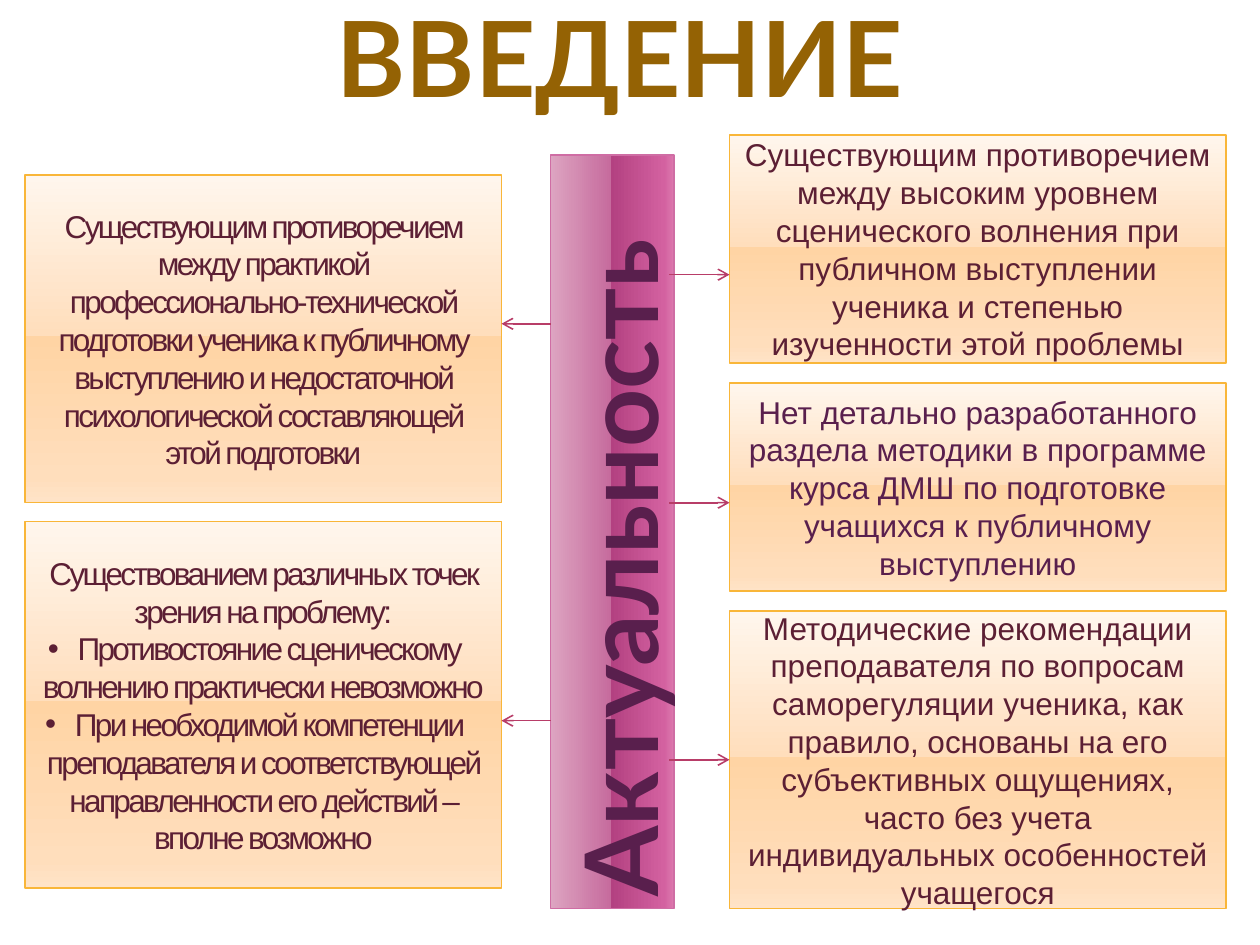
from dataclasses import dataclass

from lxml.etree import SubElement
from pptx import Presentation
from pptx.dml.color import RGBColor
from pptx.enum.shapes import MSO_CONNECTOR as Connector, MSO_SHAPE as Shape
from pptx.enum.text import MSO_ANCHOR as Anchor, PP_ALIGN as Align
from pptx.oxml.ns import qn
from pptx.util import Inches, Pt


@dataclass(frozen=True)
class Theme:
    title: str = "946204"
    title_edge: str = "5E1A50"
    plum: str = "591F4D"
    wine: str = "5C1F34"
    card_edge: str = "F9B639"
    bar_edge: str = "CF6DA4"
    arrow: str = "B83D68"
    card_stops: tuple = ("FFF6ED", "FFDEBC", "FFD4A4", "FFDEBC", "FFE3C7")
    bar_stops: tuple = ("DDA4C1", "C66B9D", "B34181", "D361A0", "DC79AE")
    stop_places: tuple = (0, 49, 49, 92, 100)
    heading_font: str = "Lato"
    body_font: str = "Arial"
    title_size: int = 60
    bar_size: int = 58
    body_size: int = 18
    line_width: float = 0.9


THEME = Theme()
LEFT_COLUMN, RIGHT_COLUMN = (0.2, 3.78), (5.79, 3.94)
BAR_LEFT, BAR_RIGHT = 4.37, 5.31

# top, height, arrow height, paragraphs (a leading bullet marks a list item)
LEFT_CARDS = [
    (1.39, 2.6, 2.57, [
        "Существующим противоречием между практикой профессионально-технической "
        "подготовки ученика к публичному выступлению и недостаточной "
        "психологической составляющей этой подготовки"]),
    (4.14, 2.91, 5.72, [
        "Существованием различных точек зрения на проблему:",
        "•Противостояние сценическому волнению практически невозможно",
        "•При необходимой компетенции преподавателя и соответствующей "
        "направленности его действий – вполне возможно"]),
]
# top, height, arrow height, text colour, paragraphs
RIGHT_CARDS = [
    (1.07, 1.81, 2.18, THEME.wine, [
        "Существующим противоречием между высоким уровнем сценического волнения "
        "при публичном выступлении ученика и степенью изученности этой проблемы"]),
    (3.04, 1.65, 3.99, THEME.plum, [
        "Нет детально разработанного раздела методики в программе курса ДМШ "
        "по подготовке учащихся к публичному выступлению"]),
    (4.85, 2.36, 6.03, THEME.wine, [
        "Методические рекомендации преподавателя по вопросам саморегуляции "
        "ученика, как правило, основаны на его субъективных ощущениях, часто "
        "без учета индивидуальных особенностей учащегося"]),
]


def apply(target, formats):
    for name, value in formats.items():
        setattr(target, name, value)


def style_font(font, face, size, colour, bold=False):
    apply(font, {"name": face, "size": Pt(size), "bold": bold})
    font.color.rgb = RGBColor.from_string(colour)


def style_line(line, colour):
    line.color.rgb = RGBColor.from_string(colour)
    line.width = Pt(THEME.line_width)


def add_panel(slide, box, stops, edge):
    """Add a rectangle with a five-stop gradient running from top to bottom."""
    panel = slide.shapes.add_shape(Shape.RECTANGLE, *map(Inches, box))
    panel.shadow.inherit = False
    style_line(panel.line, edge)
    panel.fill.gradient()
    panel.fill.gradient_angle = 270
    stop_list = panel.element.spPr.find(f".//{qn('a:gsLst')}")
    for stop in list(stop_list):
        stop_list.remove(stop)
    for place, colour in zip(THEME.stop_places, stops):
        stop = SubElement(stop_list, qn("a:gs"), pos=str(place * 1000))
        SubElement(stop, qn("a:srgbClr"), val=colour)
    panel.text_frame.word_wrap = True
    return panel


def add_card(slide, box, paragraphs, colour, spacing=0):
    """Add a text card; spacing is the letter spacing in points."""
    card = add_panel(slide, box, THEME.card_stops, THEME.card_edge)
    frame = card.text_frame
    frame.vertical_anchor = Anchor.MIDDLE
    for index, text in enumerate(paragraphs):
        paragraph = frame.add_paragraph() if index else frame.paragraphs[0]
        paragraph.alignment = Align.CENTER
        if text.startswith("•"):
            properties = paragraph._p.get_or_add_pPr()
            SubElement(properties, qn("a:buFont"), typeface=THEME.body_font)
            SubElement(properties, qn("a:buChar"), char="•")
        run = paragraph.add_run()
        run.text = text.lstrip("•")
        style_font(run.font, THEME.body_font, THEME.body_size, colour)
        if spacing:
            run._r.get_or_add_rPr().set("spc", str(round(spacing * 100)))
    return card


def add_arrow(slide, start, end, y, card, side):
    """Point from the bar to a card, joined to it where y is its middle."""
    arrow = slide.shapes.add_connector(
        Connector.STRAIGHT, Inches(start), Inches(y), Inches(end), Inches(y))
    if abs(card.top + card.height / 2 - Inches(y)) < Inches(0.02):
        arrow.end_connect(card, side)
    style_line(arrow.line, THEME.arrow)
    SubElement(arrow.line._get_or_add_ln(), qn("a:tailEnd"), type="arrow")
    SubElement(arrow._element.spPr, qn("a:effectLst"))


def set_title(slide, text):
    title = slide.shapes.title
    apply(title, dict(zip(("left", "top", "width", "height"),
                          map(Inches, (0.67, 0, 8.5, 0.94)))))
    frame = title.text_frame
    apply(frame, {"vertical_anchor": Anchor.BOTTOM, "word_wrap": True,
                  "margin_left": Inches(0.05), "margin_right": Inches(0.05),
                  "margin_top": 0, "margin_bottom": 0})
    paragraph = frame.paragraphs[0]
    paragraph.alignment = Align.CENTER
    run = paragraph.add_run()
    run.text = text
    style_font(run.font, THEME.heading_font, THEME.title_size, THEME.title, True)
    properties = run._r.get_or_add_rPr()
    outline = SubElement(properties, qn("a:ln"), w=str(Pt(0.04)))
    fill = SubElement(outline, qn("a:solidFill"))
    SubElement(fill, qn("a:srgbClr"), val=THEME.title_edge)
    properties.insert(0, outline)


def add_bar(slide, text):
    bar = add_panel(slide, (1.87, 3.73, 5.98, 0.98), THEME.bar_stops, THEME.bar_edge)
    bar.rotation = 270
    bar.text_frame.vertical_anchor = Anchor.TOP
    paragraph = bar.text_frame.paragraphs[0]
    paragraph.alignment = Align.LEFT
    run = paragraph.add_run()
    run.text = text
    style_font(run.font, THEME.heading_font, THEME.bar_size, THEME.plum, True)


def main():
    deck = Presentation()
    apply(deck, {"slide_width": Inches(10), "slide_height": Inches(7.5)})
    slide = deck.slides.add_slide(deck.slide_layouts[5])
    set_title(slide, "ВВЕДЕНИЕ")
    add_bar(slide, "Актуальность")

    left, width = LEFT_COLUMN
    for top, height, arrow_y, paragraphs in LEFT_CARDS:
        card = add_card(slide, (left, top, width, height), paragraphs, THEME.wine, -1.5)
        add_arrow(slide, BAR_LEFT, left + width, arrow_y, card, 3)

    left, width = RIGHT_COLUMN
    for top, height, arrow_y, colour, paragraphs in RIGHT_CARDS:
        card = add_card(slide, (left, top, width, height), paragraphs, colour)
        add_arrow(slide, BAR_RIGHT, left, arrow_y, card, 1)

    deck.save("out.pptx")


if __name__ == "__main__":
    main()
